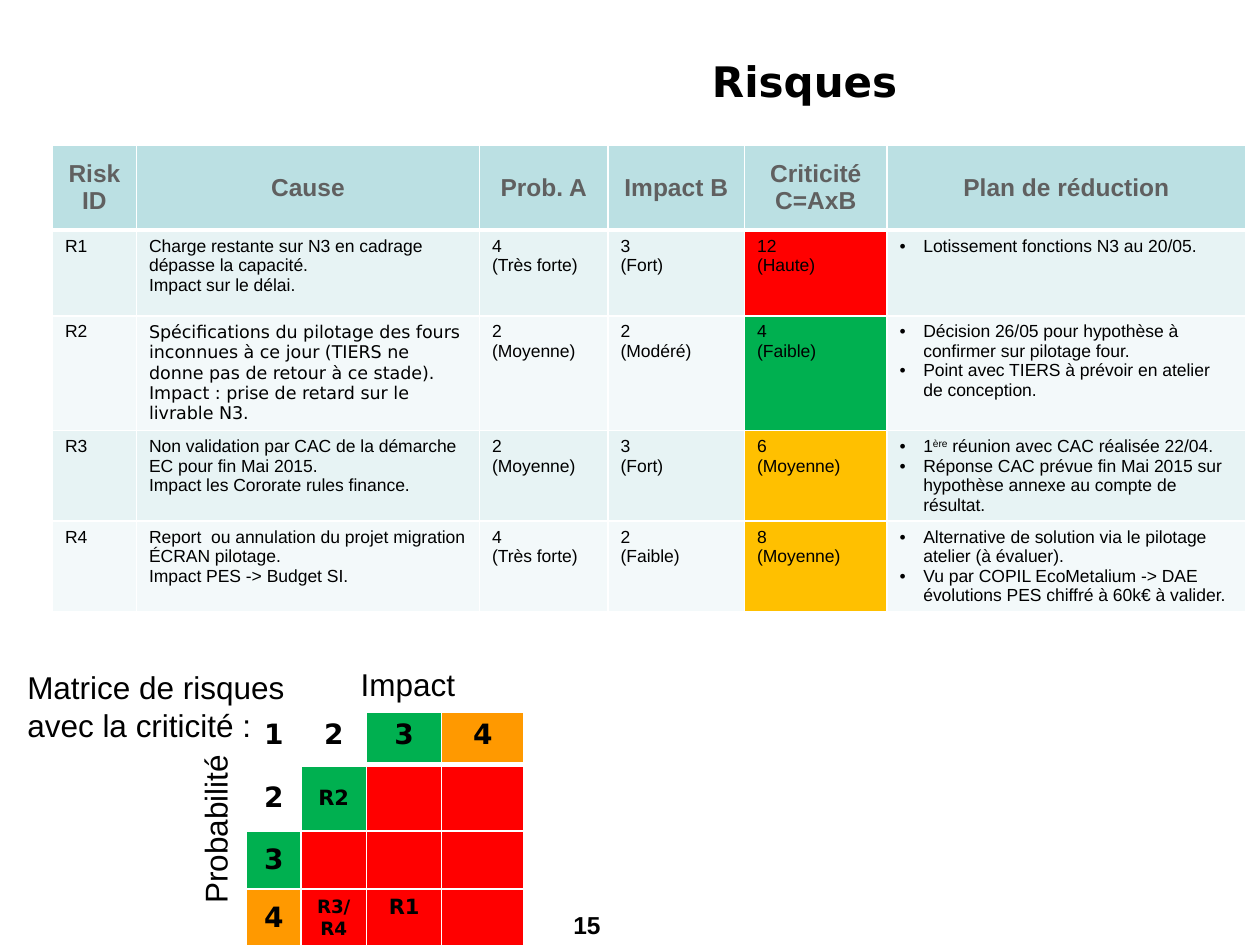
import pptx
import pptx.dml.color
import pptx.enum.text
import pptx.oxml.ns
import pptx.util
from dataclasses import dataclass
from lxml import etree

Pt = pptx.util.Pt
RGB = pptx.dml.color.RGBColor.from_string
ALIGN = pptx.enum.text.PP_ALIGN
ANCHOR = pptx.enum.text.MSO_ANCHOR
AUTO = pptx.enum.text.MSO_AUTO_SIZE
qn = pptx.oxml.ns.qn


@dataclass(frozen=True)
class Theme:
    """Colours, fonts and type sizes of the slide."""
    sans: str = "Arial"
    display: str = "DejaVu Sans"
    black: str = "000000"
    white: str = "FFFFFF"
    head_text: str = "606060"
    head: str = "BBE0E3"
    bands: tuple = ("E7F3F4", "F3F9FA")
    red: str = "FF0000"
    green: str = "00B050"
    amber: str = "FFC000"
    orange: str = "FF9900"
    title: float = 24
    label: float = 18
    axis: float = 16
    header: float = 14
    risk: float = 12
    small_risk: float = 10.5
    body: float = 10


T = Theme()

RISK_HEADS = ["Risk ID", "Cause", "Prob. A", "Impact B", "Criticité\nC=AxB", "Plan de réduction"]
RISKS = [
    (["R1", "Charge restante sur N3 en cadrage dépasse la capacité.\nImpact sur le délai.",
      "4\n(Très forte)", "3\n(Fort)", "12\n(Haute)",
      "Lotissement fonctions N3 au 20/05."], T.red),
    (["R2", "Spécifications du pilotage des fours inconnues à ce jour (TIERS ne donne pas de "
      "retour à ce stade).\nImpact : prise de retard sur le livrable N3.",
      "2\n(Moyenne)", "2\n(Modéré)", "4\n(Faible)",
      "Décision 26/05 pour hypothèse à confirmer sur pilotage four.\n"
      "Point avec TIERS à prévoir en atelier de conception."], T.green),
    (["R3", "Non validation par CAC de la démarche EC pour fin Mai 2015.\n"
      "Impact les Cororate rules finance.",
      "2\n(Moyenne)", "3\n(Fort)", "6\n(Moyenne)",
      "1^ère^ réunion avec CAC réalisée 22/04.\n"
      "Réponse CAC prévue fin Mai 2015 sur hypothèse annexe au compte de résultat."], T.amber),
    (["R4", "Report  ou annulation du projet migration ÉCRAN pilotage.\nImpact PES -> Budget SI.",
      "4\n(Très forte)", "2\n(Faible)", "8\n(Moyenne)",
      "Alternative de solution via le pilotage atelier (à évaluer).\n"
      "Vu par COPIL EcoMetalium -> DAE évolutions PES chiffré à 60k€ à valider."], T.amber),
]
MATRIX = [["1", "2", "3", "4"], ["2", "R2", "", ""], ["3", "", "", ""], ["4", "R3/R4", "R1", ""]]
MATRIX_FILLS = {2: T.white, 3: T.white, 4: T.green, 5: T.orange}
RISK_SIZES = {"R1": T.risk, "R2": T.risk, "R3/R4": T.small_risk}


def font_format(size, name=T.sans, bold=False):
    """Return the font attributes of a run."""
    return {"size": Pt(size), "name": name, "bold": bold}


def set_bullet(p, indent=13.5):
    """Give a paragraph a hanging round bullet."""
    pPr = p._p.get_or_add_pPr()
    pPr.set("marL", str(Pt(indent)))
    pPr.set("indent", str(-Pt(indent)))
    etree.SubElement(pPr, qn("a:buFont")).set("typeface", T.sans)
    etree.SubElement(pPr, qn("a:buChar")).set("char", "•")


def write(tf, text, fmt, color=T.black, align=ALIGN.LEFT, bullet=False):
    """Write one paragraph per line, with superscripts between carets."""
    for i, line in enumerate(text.split("\n")):
        p = tf.paragraphs[0] if i == 0 else tf.add_paragraph()
        p.alignment = align
        if bullet:
            set_bullet(p)
        for j, part in enumerate(line.split("^")):
            r = p.add_run()
            r.text = part
            for key, value in fmt.items():
                setattr(r.font, key, value)
            r.font.color.rgb = RGB(color)
            if j % 2:
                r._r.get_or_add_rPr().set("baseline", "30000")


def style_cell(cell, fill, header, anchor):
    """Set the white borders, fill and anchor of a cell."""
    tcPr = cell._tc.get_or_add_tcPr()
    for side in "LRTB":
        ln = etree.SubElement(tcPr, qn("a:ln" + side))
        ln.set("w", str(Pt(3 if header and side == "B" else 1)))
        line_fill = etree.SubElement(ln, qn("a:solidFill"))
        etree.SubElement(line_fill, qn("a:srgbClr")).set("val", T.white)
    cell.fill.solid()
    cell.fill.fore_color.rgb = RGB(fill)
    cell.vertical_anchor = anchor


def add_grid(s, x, y, widths, heights):
    """Add a table with the given column widths and row heights."""
    tbl = s.shapes.add_table(len(heights), len(widths), Pt(x), Pt(y),
                             Pt(sum(widths)), Pt(sum(heights))).table
    tbl.horz_banding = False
    for col, w in zip(tbl.columns, widths):
        col.width = Pt(w)
    for row, h in zip(tbl.rows, heights):
        row.height = Pt(h)
    return tbl


def add_title(s, x, y, w, h):
    """Place and format the title."""
    sp = s.shapes.title
    for key, value in {"left": x, "top": y, "width": w, "height": h}.items():
        setattr(sp, key, Pt(value))
    sp.text_frame.vertical_anchor = ANCHOR.MIDDLE
    write(sp.text_frame, "Risques", font_format(T.title, T.display, True), align=ALIGN.CENTER)


def add_risk_table(s, x, y):
    """Add the list of risks with their criticality."""
    tbl = add_grid(s, x, y, [48, 196, 73.5, 78, 81.5, 205], [48.5, 49, 59, 51, 51])
    for c, text in enumerate(RISK_HEADS):
        cell = tbl.cell(0, c)
        style_cell(cell, T.head, True, ANCHOR.MIDDLE)
        write(cell.text_frame, text, font_format(T.header, bold=True), T.head_text, ALIGN.CENTER)
    for r, (texts, level) in enumerate(RISKS, 1):
        for c, text in enumerate(texts):
            cell = tbl.cell(r, c)
            style_cell(cell, level if c == 4 else T.bands[(r - 1) % 2], False, ANCHOR.TOP)
            name = T.display if (r, c) == (2, 1) else T.sans
            write(cell.text_frame, text, font_format(T.body, name), bullet=c == 5)


def add_matrix(s, x, y):
    """Add the matrix of probability against impact."""
    tbl = add_grid(s, x, y, [31, 37.5, 43, 47], [30, 38, 33, 33.5])
    for r, row in enumerate(MATRIX):
        for c, text in enumerate(row):
            cell = tbl.cell(r, c)
            fill = MATRIX_FILLS.get(r + c + (2 if r * c == 0 else 3), T.red)
            if (r, c) == (1, 1):
                fill = T.green
            top = r == 0 or text == "R1"
            style_cell(cell, fill, r == 0, ANCHOR.TOP if top else ANCHOR.MIDDLE)
            if text:
                fmt = font_format(RISK_SIZES.get(text, T.axis), T.display, True)
                write(cell.text_frame, text, fmt, align=ALIGN.CENTER)


def add_label(s, x, y, w, h, text, fmt, align=ALIGN.LEFT, rotation=0):
    """Add a free text label."""
    sp = s.shapes.add_textbox(Pt(x), Pt(y), Pt(w), Pt(h))
    sp.rotation = rotation
    sp.text_frame.word_wrap = False
    sp.text_frame.auto_size = AUTO.SHAPE_TO_FIT_TEXT
    write(sp.text_frame, text, fmt, align=align)


def main():
    """Build and save the risk slide."""
    prs = pptx.Presentation()
    prs.slide_width, prs.slide_height = Pt(720), Pt(540)
    s = prs.slides.add_slide(prs.slide_layouts[5])
    label = font_format(T.label)
    add_title(s, 212.5, 26, 494.5, 40.5)
    add_risk_table(s, 30, 83)
    add_matrix(s, 141, 407)
    add_label(s, 8.5, 378, 168, 51, "Matrice de risques\navec la criticité :", label)
    add_label(s, 199, 376.5, 69, 29, "Impact", label)
    add_label(s, 73, 459.5, 100, 29, "Probabilité", label, ALIGN.CENTER, 270)
    add_label(s, 320.5, 516.5, 30, 24, "15", font_format(T.header, bold=True))
    prs.save("out.pptx")


if __name__ == "__main__":
    main()
